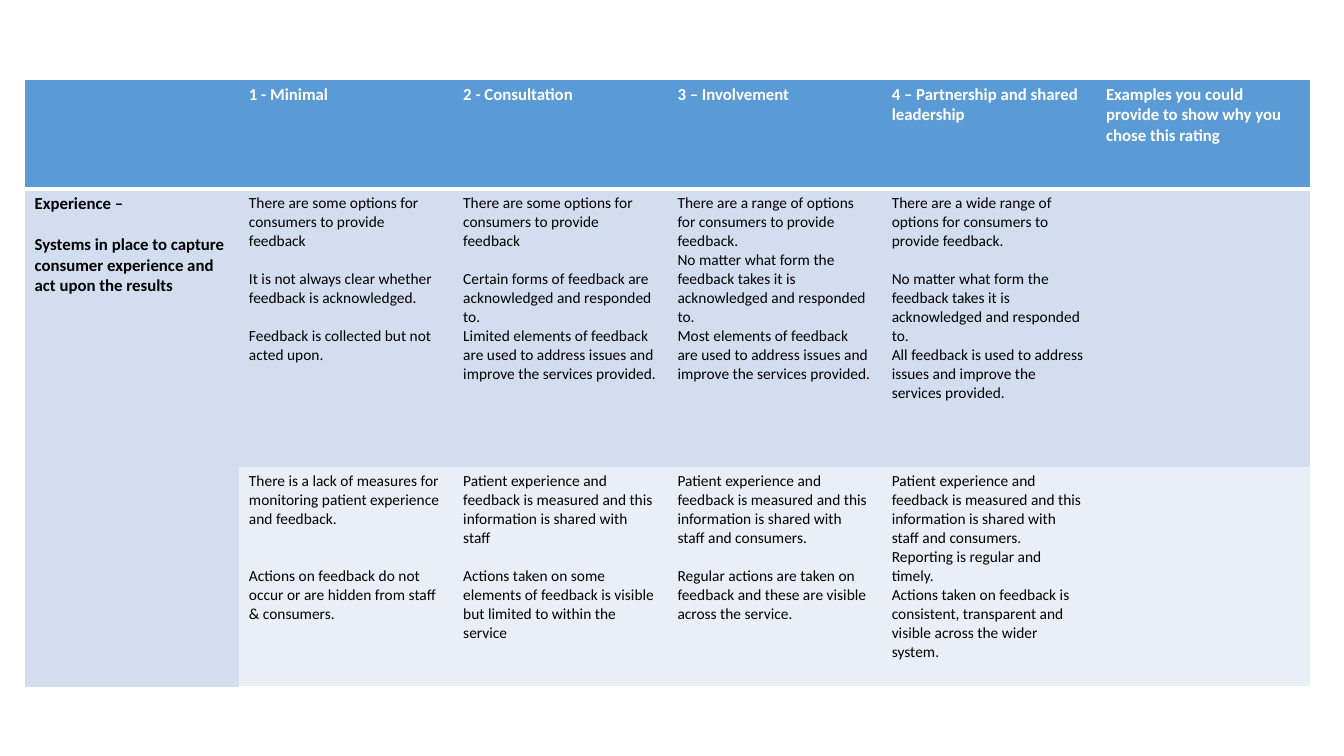
from dataclasses import dataclass

from lxml.etree import SubElement
from pptx import Presentation
from pptx.dml.color import RGBColor as Rgb
from pptx.oxml.ns import qn
from pptx.util import Cm, Pt


@dataclass(frozen=True)
class Theme:
    font: str = "Calibri"
    heading_size: float = 12
    body_size: float = 11
    line_height: float = 1.22
    header: str = "5B9BD5"
    bands: tuple = ("D2DEEF", "EAEFF7")
    white: str = "FFFFFF"
    black: str = "000000"
    outer_rule: float = 1
    header_rule: float = 3


THEME = Theme()

LEVELS = [
    "",
    "1 - Minimal",
    "2 - Consultation",
    "3 – Involvement",
    "4 – Partnership and shared leadership",
    "Examples you could provide to show why you chose this rating",
]

# A paragraph is a string, or a pair of text and the lines of space above it.
TOPIC = [
    "Experience –",
    ("Systems in place to capture consumer experience and act upon the results", 1),
]

CRITERIA = [
    [
        ["There are some options for consumers to provide feedback",
         ("It is not always clear whether feedback is acknowledged.", 1),
         ("Feedback is collected but not acted upon.", 1)],
        ["There are some options for consumers to provide feedback",
         ("Certain forms of feedback are acknowledged and responded to.", 1),
         "Limited elements of feedback are used to address issues and improve "
         "the services provided."],
        ["There are a range of options for consumers to provide feedback.",
         "No matter what form the feedback takes it is acknowledged and responded to.",
         "Most elements of feedback are used to address issues and improve "
         "the services provided."],
        ["There are a wide range of options for consumers to provide feedback.",
         ("No matter what form the feedback takes it is acknowledged and responded to.", 1),
         "All feedback is used to address issues and improve the services provided."],
        [],
    ],
    [
        ["There is a lack of measures for monitoring patient experience and feedback.",
         ("Actions on feedback do not occur or are hidden from staff & consumers.", 2)],
        ["Patient experience and feedback is measured and this information is "
         "shared with staff",
         ("Actions taken on some elements of feedback is visible but limited "
          "to within the service", 1)],
        ["Patient experience and feedback is measured and this information is "
         "shared with staff and consumers.",
         ("Regular actions are taken on feedback and these are visible across "
          "the service.", 1)],
        ["Patient experience and feedback is measured and this information is "
         "shared with staff and consumers. Reporting is regular and timely.",
         "Actions taken on feedback is consistent, transparent and visible "
         "across the wider system."],
        [],
    ],
]


def write(frame, paragraphs, size=THEME.body_size, color=THEME.black, bold=False):
    for index, entry in enumerate(paragraphs):
        text, gap = (entry, 0) if isinstance(entry, str) else entry
        paragraph = frame.paragraphs[0] if index == 0 else frame.add_paragraph()
        paragraph.space_before = Pt(round(gap * size * THEME.line_height, 1))
        run = paragraph.add_run()
        run.text = text
        run.font.name = THEME.font
        run.font.size = Pt(size)
        run.font.bold = bold
        run.font.color.rgb = Rgb.from_string(color)


def style_cell(cell, fill, rules):
    """Fill the cell and rule its sides; a side with no width gets no line."""
    properties = cell._tc.get_or_add_tcPr()
    for side in "LRTB":
        width = rules.get(side, 0)
        line = SubElement(properties, qn(f"a:ln{side}"), w=str(Pt(width)))
        if width:
            paint = SubElement(line, qn("a:solidFill"))
            SubElement(paint, qn("a:srgbClr"), val=THEME.white)
        else:
            SubElement(line, qn("a:noFill"))
    cell.fill.solid()
    cell.fill.fore_color.rgb = Rgb.from_string(fill)


def cell_rules(row, column, last_row, last_column):
    rules = {}
    if column == 0:
        rules["L"] = THEME.outer_rule
    if column == last_column:
        rules["R"] = THEME.outer_rule
    if row == 0:
        rules.update(T=THEME.outer_rule, B=THEME.header_rule)
    if row == 1:
        rules["T"] = THEME.header_rule
    if row == last_row:
        rules["B"] = THEME.outer_rule
    return rules


def add_rating_table(slide, left, top, width, row_heights):
    rows, columns = len(row_heights), len(LEVELS)
    table = slide.shapes.add_table(
        rows, columns, left, top, width, sum(row_heights)).table
    for column in table.columns:
        column.width = width // columns
    for row, height in zip(table.rows, row_heights):
        row.height = height

    for row in range(rows):
        for column in range(columns):
            if row == 0:
                fill = THEME.header
            else:
                fill = THEME.bands[0 if column == 0 else row - 1]
            style_cell(table.cell(row, column), fill,
                       cell_rules(row, column, rows - 1, columns - 1))

    for column, level in enumerate(LEVELS):
        if level:
            write(table.cell(0, column).text_frame, [level],
                  size=THEME.heading_size, color=THEME.white, bold=True)
    topic = table.cell(1, 0)
    topic.merge(table.cell(rows - 1, 0))
    write(topic.text_frame, TOPIC, size=THEME.heading_size, bold=True)
    for row, criteria in enumerate(CRITERIA, start=1):
        for column, paragraphs in enumerate(criteria, start=1):
            write(table.cell(row, column).text_frame, paragraphs)


def main():
    deck = Presentation()
    deck.slide_width, deck.slide_height = Cm(33.87), Cm(19.05)
    slide = deck.slides.add_slide(deck.slide_layouts[6])
    add_rating_table(slide, Cm(0.62), Cm(2), Cm(32.4),
                     [Cm(2.76), Cm(7.01), Cm(5.54)])
    deck.save("out.pptx")


if __name__ == "__main__":
    main()
